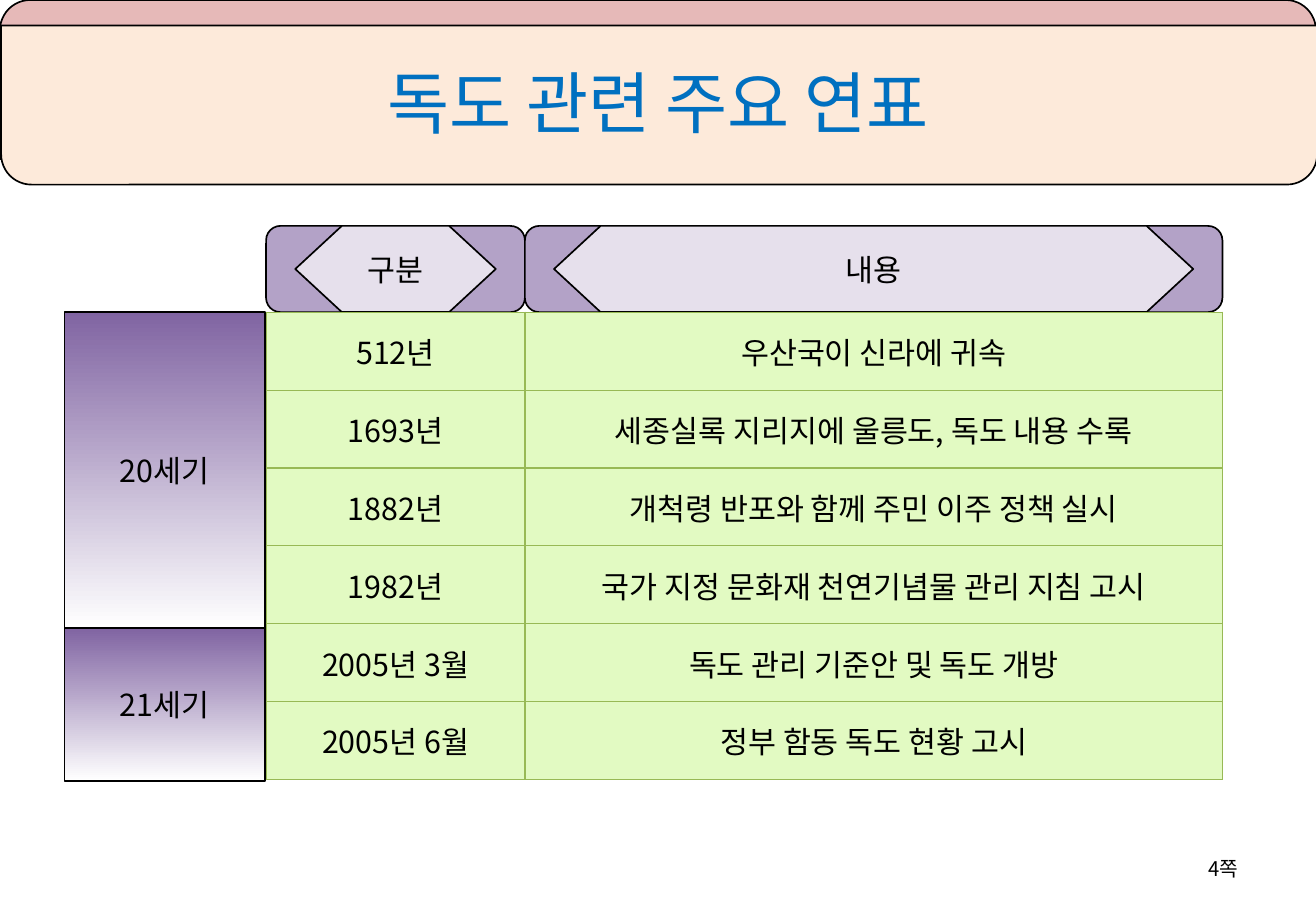
from lxml.etree import SubElement
from pptx import Presentation
from pptx.dml.color import RGBColor
from pptx.enum.shapes import MSO_SHAPE
from pptx.enum.text import MSO_ANCHOR, PP_ALIGN
from pptx.oxml.ns import qn
from pptx.util import Inches, Pt

TITLE = "독도 관련 주요 연표"
PAGE = "4쪽"
HEADINGS = ["구분", "내용"]
EVENTS = [
    ("512년", "우산국이 신라에 귀속"),
    ("1693년", "세종실록 지리지에 울릉도, 독도 내용 수록"),
    ("1882년", "개척령 반포와 함께 주민 이주 정책 실시"),
    ("1982년", "국가 지정 문화재 천연기념물 관리 지침 고시"),
    ("2005년 3월", "독도 관리 기준안 및 독도 개방"),
    ("2005년 6월", "정부 함동 독도 현황 고시"),
]
CENTURIES = [("20세기", 2.57, 2.6), ("21세기", 5.17, 1.26)]

FONT = "Noto Sans CJK KR"
BLACK = RGBColor(0x00, 0x00, 0x00)
WHITE = RGBColor(0xFF, 0xFF, 0xFF)
BLUE = RGBColor(0x00, 0x70, 0xC0)
PINK = RGBColor(0xE6, 0xB9, 0xB8)
PEACH = RGBColor(0xFD, 0xEA, 0xDA)
PURPLE = RGBColor(0x80, 0x64, 0xA2)
LILAC = RGBColor(0xB3, 0xA2, 0xC7)
PALE_LILAC = RGBColor(0xE6, 0xE0, 0xEC)
PALE_GREEN = RGBColor(0xE2, 0xFA, 0xC2)
BORDER = "98B955"

SLIDE_W, SLIDE_H = 10.83, 7.5
TABLE_LEFT, TABLE_TOP = 2.19, 2.57
COL_WIDTHS = [2.13, 5.74]
ROW_H = 3.85 / len(EVENTS)
HEAD_H = 0.71
HEX_INSET = 0.24
CENTURY_LEFT, CENTURY_W = 0.53, 1.65


def write(tf, text, size=18, color=BLACK, align=PP_ALIGN.CENTER):
    tf.word_wrap = True
    tf.vertical_anchor = MSO_ANCHOR.MIDDLE
    p = tf.paragraphs[0]
    p.alignment = align
    r = p.add_run()
    r.text = text
    r.font.size = Pt(size)
    r.font.color.rgb = color
    r.font.name = FONT
    SubElement(r.font._element, qn("a:ea"), typeface=FONT)


def add_box(kind, left, top, width, height, color=None):
    sp = s.shapes.add_shape(kind, Inches(left), Inches(top), Inches(width), Inches(height))
    sp.shadow.inherit = False
    if color is not None:
        sp.fill.solid()
        sp.fill.fore_color.rgb = color
    sp.line.color.rgb = BLACK
    sp.line.width = Pt(1)
    return sp


def add_borders(cell):
    tc_pr = cell._tc.get_or_add_tcPr()
    for side in ("lnL", "lnR", "lnT", "lnB"):
        ln = SubElement(tc_pr, qn(f"a:{side}"), w=str(Pt(0.75)))
        SubElement(SubElement(ln, qn("a:solidFill")), qn("a:srgbClr"), val=BORDER)


prs = Presentation()
prs.slide_width, prs.slide_height = Inches(SLIDE_W), Inches(SLIDE_H)
s = prs.slides.add_slide(prs.slide_layouts[5])

for left, top, color, corners in [(0, 0, PINK, (0.19, 0)), (0.01, 0.21, PEACH, (0, 0.19))]:
    band = add_box(MSO_SHAPE.ROUND_2_SAME_RECTANGLE, left, top, SLIDE_W, 1.31, color)
    band.adjustments[0], band.adjustments[1] = corners

title = s.shapes.title
title.left, title.top = Inches(0.54), Inches(0.21)
title.width, title.height = Inches(9.75), Inches(1.25)
write(title.text_frame, TITLE, 40, BLUE)
title.element.getparent().append(title.element)

page = s.shapes.add_textbox(Inches(7.76), Inches(6.95), Inches(2.53), Inches(0.4))
write(page.text_frame, PAGE, 12, align=PP_ALIGN.RIGHT)

left = TABLE_LEFT
for heading, width in zip(HEADINGS, COL_WIDTHS):
    top = TABLE_TOP - HEAD_H
    add_box(MSO_SHAPE.ROUNDED_RECTANGLE, left, top, width, HEAD_H, LILAC)
    hexagon = add_box(MSO_SHAPE.HEXAGON, left + HEX_INSET, top,
                      width - 2 * HEX_INSET, HEAD_H, PALE_LILAC)
    hexagon.adjustments[0] = 0.54
    write(hexagon.text_frame, heading)
    left += width

for century, top, height in CENTURIES:
    box = add_box(MSO_SHAPE.RECTANGLE, CENTURY_LEFT, top, CENTURY_W, height)
    box.fill.gradient()
    box.fill.gradient_angle = 270
    for stop, color, position in zip(box.fill.gradient_stops, (PURPLE, WHITE), (0, 1)):
        stop.color.rgb = color
        stop.position = position
    write(box.text_frame, century)

table = s.shapes.add_table(
    len(EVENTS), len(COL_WIDTHS), Inches(TABLE_LEFT), Inches(TABLE_TOP),
    Inches(sum(COL_WIDTHS)), Inches(ROW_H * len(EVENTS))).table
table.first_row = False
table.horz_banding = False
for column, width in zip(table.columns, COL_WIDTHS):
    column.width = Inches(width)
for row, event in zip(table.rows, EVENTS):
    row.height = Inches(ROW_H)
    for cell, text in zip(row.cells, event):
        add_borders(cell)
        cell.fill.solid()
        cell.fill.fore_color.rgb = PALE_GREEN
        cell.vertical_anchor = MSO_ANCHOR.MIDDLE
        write(cell.text_frame, text)

prs.save("out.pptx")
